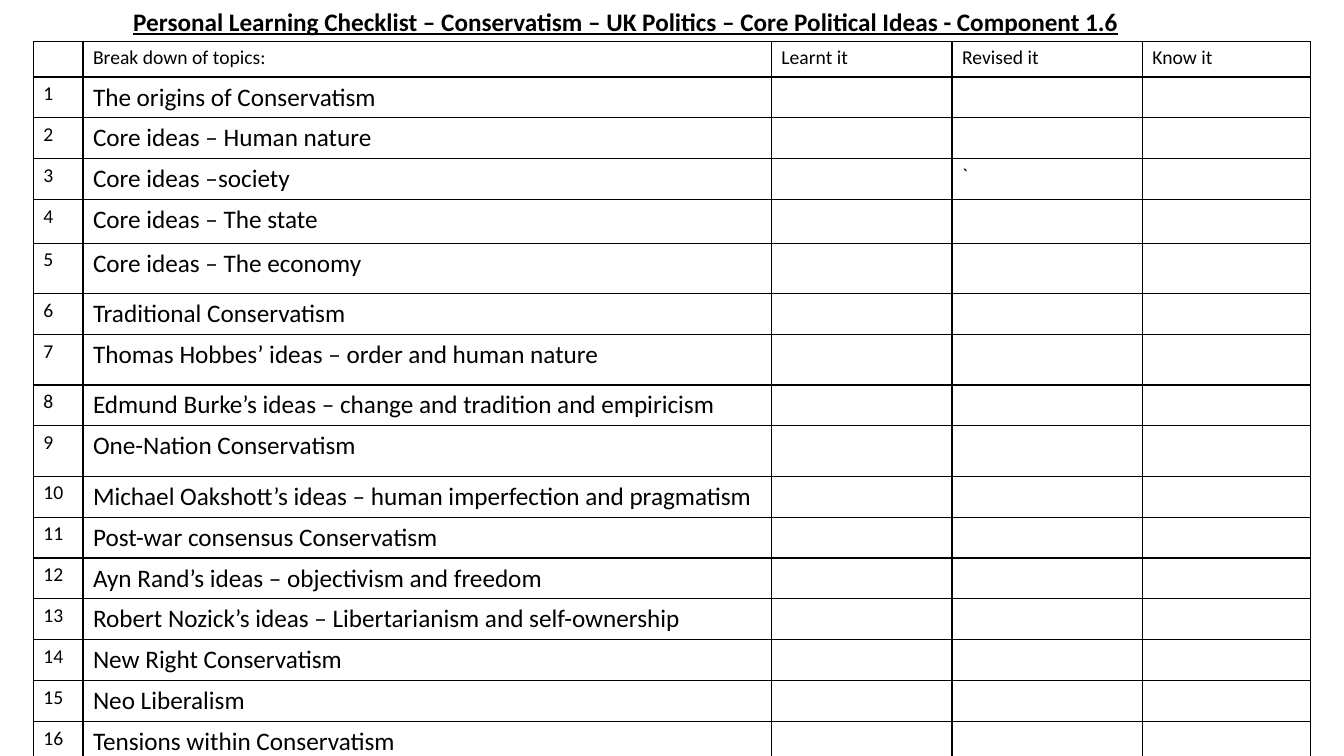
from lxml.etree import SubElement
from pptx import Presentation
from pptx.dml.color import RGBColor
from pptx.enum.text import MSO_ANCHOR, PP_ALIGN
from pptx.oxml.ns import qn
from pptx.util import Cm, Pt

TITLE = ("Personal Learning Checklist – Conservatism – UK Politics – "
         "Core Political Ideas - Component 1.6")
HEADINGS = ["", "Break down of topics:", "Learnt it", "Revised it", "Know it"]
TOPICS = [
    "The origins of Conservatism",
    "Core ideas – Human nature",
    "Core ideas –society",
    "Core ideas – The state",
    "Core ideas – The economy",
    "Traditional Conservatism",
    "Thomas Hobbes’ ideas – order and human nature",
    "Edmund Burke’s ideas – change and tradition and empiricism",
    "One-Nation Conservatism",
    "Michael Oakshott’s ideas – human imperfection and pragmatism",
    "Post-war consensus Conservatism",
    "Ayn Rand’s ideas – objectivism and freedom",
    "Robert Nozick’s ideas – Libertarianism and self-ownership",
    "New Right Conservatism",
    "Neo Liberalism",
    "Tensions within Conservatism",
]
MARKS = {(3, 3): "`"}  # (row, column): entry in a tick column

COLUMN_WIDTHS = [1.25, 17.35, 4.55, 4.8, 4.24]
HEADER_HEIGHT, TOPIC_HEIGHT = 0.9, 1.03
TALL_ROWS = {4: 1.1, 5: 1.27, 7: 1.27, 9: 1.27}
FONT, BLACK, WHITE = "Calibri", "000000", "FFFFFF"


def color(hex_code):
    return RGBColor.from_string(hex_code)


def style(para, size):
    para.font.name = FONT
    para.font.size = Pt(size)
    para.font.color.rgb = color(BLACK)


def add_borders(cell):
    """Draw a 1 pt line on all four sides; call before filling the cell."""
    properties = cell._tc.get_or_add_tcPr()
    for side in ("a:lnL", "a:lnR", "a:lnT", "a:lnB"):
        line = SubElement(properties, qn(side), w=str(Pt(1)))
        fill = SubElement(line, qn("a:solidFill"))
        SubElement(fill, qn("a:srgbClr"), val=BLACK)


def add_title(page):
    box = page.shapes.add_textbox(Cm(0), Cm(-0.05), Cm(31.55), Cm(1.27))
    frame = box.text_frame
    frame.word_wrap = True
    frame.vertical_anchor = MSO_ANCHOR.MIDDLE
    para = frame.paragraphs[0]
    para.text = TITLE
    para.alignment = PP_ALIGN.CENTER
    para.line_spacing = 0.9
    style(para, 18)
    para.font.bold = True
    para.font.underline = True


def add_checklist(page):
    rows = [HEADINGS]
    for number, topic in enumerate(TOPICS, 1):
        ticks = [MARKS.get((number, column), "") for column in (2, 3, 4)]
        rows.append([str(number), topic, *ticks])
    heights = [HEADER_HEIGHT] + [TALL_ROWS.get(number, TOPIC_HEIGHT)
                                 for number in range(1, len(rows))]

    table = page.shapes.add_table(
        len(rows), len(HEADINGS), Cm(0.84), Cm(1.04),
        Cm(sum(COLUMN_WIDTHS)), Cm(sum(heights))).table
    table.first_row = table.horz_banding = False
    for column, width in zip(table.columns, COLUMN_WIDTHS):
        column.width = Cm(width)
    for r, (entries, height) in enumerate(zip(rows, heights)):
        table.rows[r].height = Cm(height)
        for c, entry in enumerate(entries):
            cell = table.cell(r, c)
            add_borders(cell)
            cell.fill.solid()
            cell.fill.fore_color.rgb = color(WHITE)
            para = cell.text_frame.paragraphs[0]
            para.text = entry
            style(para, 18 if r and c == 1 else 14)


def main():
    deck = Presentation()
    deck.slide_width, deck.slide_height = Cm(33.87), Cm(19.05)
    page = deck.slides.add_slide(deck.slide_layouts[6])
    add_title(page)
    add_checklist(page)
    deck.save("out.pptx")


if __name__ == "__main__":
    main()
